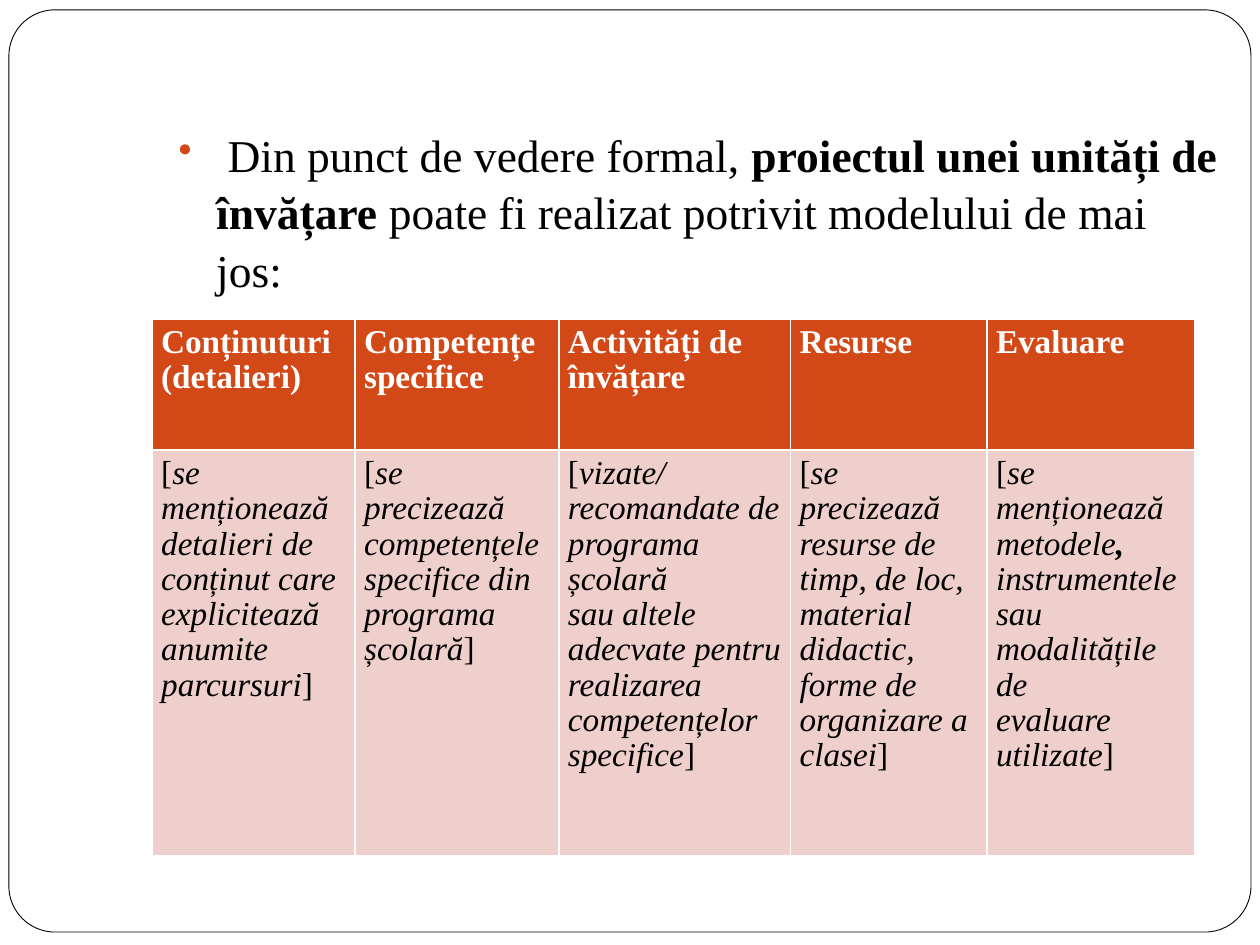
import pptx
import pptx.dml.color
import pptx.enum.shapes
import pptx.oxml
import pptx.oxml.ns
import pptx.util
from pptx.util import Cm

RGBColor = pptx.dml.color.RGBColor
BLACK = RGBColor(0x00, 0x00, 0x00)
WHITE = RGBColor(0xFF, 0xFF, 0xFF)
ORANGE = RGBColor(0xD3, 0x48, 0x17)
PINK = RGBColor(0xEF, 0xCF, 0xCC)

NS = pptx.oxml.ns.nsdecls("a")
COLUMN_WIDTHS = [4.09, 4.11, 4.67, 3.96, 4.19]
ROW_HEIGHTS = [2.64, 8.18]
HEADINGS = [
    ["Conținuturi", "(detalieri)"],
    ["Competențe specifice"],
    ["Activități de învățare"],
    ["Resurse"],
    ["Evaluare"],
]
DESCRIPTIONS = [
    ["se menționează detalieri de conținut care explicitează anumite parcursuri"],
    ["se precizează", "competențele", "specifice din", "programa", "școlară"],
    ["vizate/", "recomandate de", "programa școlară", "sau altele",
     "adecvate pentru", "realizarea", "competențelor", "specifice"],
    ["se precizează resurse de timp, de loc, material didactic, "
     "forme de organizare a clasei"],
    ["se menționează metodele,", "instrumentele", "sau", "modalitățile de",
     "evaluare", "utilizate"],
]


def add_run(paragraph, text, size=19, color=BLACK, bold=False, italic=False,
            font="Times New Roman"):
    run = paragraph.add_run()
    run.text = text
    run.font.name = font
    run.font.size = pptx.util.Pt(size)
    run.font.color.rgb = color
    run.font.bold = bold
    run.font.italic = italic


def add_bullet(paragraph, indent):
    """Give the paragraph a hanging orange bullet."""
    properties = paragraph._p.get_or_add_pPr()
    properties.set("marL", str(indent))
    properties.set("indent", str(-indent))
    for xml in (f'<a:buClr {NS}><a:srgbClr val="{ORANGE}"/></a:buClr>',
                f'<a:buSzPct {NS} val="85000"/>',
                f'<a:buChar {NS} char="•"/>'):
        properties.append(pptx.oxml.parse_xml(xml))


def add_borders(cell, color=WHITE, width=1):
    properties = cell._tc.get_or_add_tcPr()
    for position, side in enumerate("LRTB"):
        properties.insert(position, pptx.oxml.parse_xml(
            f'<a:ln{side} {NS} w="{pptx.util.Pt(width)}"><a:solidFill>'
            f'<a:srgbClr val="{color}"/></a:solidFill></a:ln{side}>'))


def bracketed(lines):
    """Turn lines into runs: upright brackets around italics, a bold end comma."""
    paragraphs = []
    for line in lines:
        words = line.rstrip(",")
        runs = [(words, {"italic": True})]
        if words != line:
            runs.append((",", {"italic": True, "bold": True}))
        paragraphs.append(runs)
    paragraphs[0].insert(0, ("[", {}))
    paragraphs[-1].append(("]", {}))
    return paragraphs


def heading(lines):
    return [[(line, {"color": WHITE, "bold": True})] for line in lines]


class SlideBuilder:
    def __init__(self, slide):
        self.shapes = slide.shapes
        self.body_size = 26

    def frame(self, left, top, width, height):
        frame = self.shapes.add_shape(
            pptx.enum.shapes.MSO_SHAPE.ROUNDED_RECTANGLE,
            Cm(left), Cm(top), Cm(width), Cm(height))
        frame.adjustments[0] = 0.05
        frame.shadow.inherit = False
        frame.fill.solid()
        frame.fill.fore_color.rgb = WHITE
        frame.line.color.rgb = BLACK
        frame.line.width = pptx.util.Pt(0.5)

    def bullet_text(self, left, top, width, height, runs):
        text = self.shapes.add_textbox(
            Cm(left), Cm(top), Cm(width), Cm(height)).text_frame
        text.word_wrap = True
        text.margin_top = Cm(1.52)
        paragraph = text.paragraphs[0]
        paragraph.line_spacing = 1.05
        add_bullet(paragraph, Cm(0.76))
        for words, bold in runs:
            add_run(paragraph, words, size=self.body_size, bold=bold)

    def table(self, left, top, rows):
        """Each row is its fill and its cells, given as paragraphs of runs."""
        table = self.shapes.add_table(
            len(rows), len(COLUMN_WIDTHS), Cm(left), Cm(top),
            Cm(sum(COLUMN_WIDTHS)), Cm(sum(ROW_HEIGHTS))).table
        table.horz_banding = False
        for column, width in zip(table.columns, COLUMN_WIDTHS):
            column.width = Cm(width)
        for row, height, (fill, contents) in zip(table.rows, ROW_HEIGHTS, rows):
            row.height = Cm(height)
            for cell, paragraphs in zip(row.cells, contents):
                self.fill_cell(cell, fill, paragraphs)

    def fill_cell(self, cell, fill, paragraphs):
        cell.fill.solid()
        cell.fill.fore_color.rgb = fill
        add_borders(cell)
        cell.margin_left = cell.margin_right = Cm(0.18)
        cell.margin_top = cell.margin_bottom = Cm(0.13)
        text = cell.text_frame
        for index, runs in enumerate(paragraphs):
            paragraph = text.add_paragraph() if index else text.paragraphs[0]
            paragraph.line_spacing = 0.96
            for words, style in runs:
                add_run(paragraph, words, **style)


def main():
    presentation = pptx.Presentation()
    presentation.slide_width = Cm(25.4)
    presentation.slide_height = Cm(19.05)
    builder = SlideBuilder(
        presentation.slides.add_slide(presentation.slide_layouts[6]))
    builder.frame(0.18, 0.2, 25.04, 18.59)
    builder.bullet_text(3.35, 0.99, 21.54, 4.88, [
        (" ", True),
        ("Din punct de vedere formal, ", False),
        ("proiectul unei unități de învățare ", True),
        ("poate fi realizat potrivit modelului de mai jos:", False),
    ])
    builder.table(3.07, 6.43, [
        (ORANGE, [heading(lines) for lines in HEADINGS]),
        (PINK, [bracketed(lines) for lines in DESCRIPTIONS]),
    ])
    presentation.save("out.pptx")


if __name__ == "__main__":
    main()
